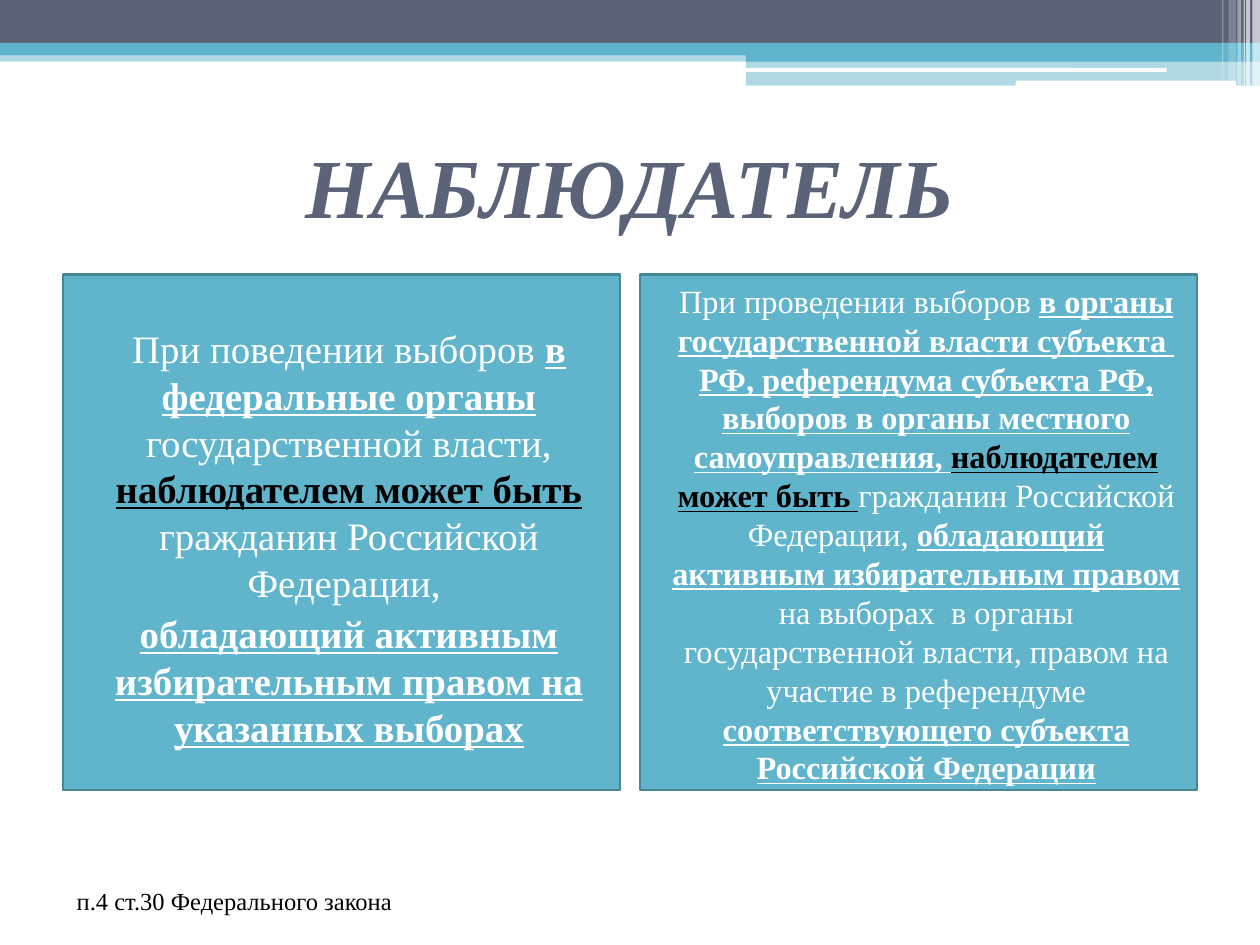
from lxml import etree
from pptx import Presentation
from pptx.dml.color import RGBColor
from pptx.enum import shapes, text
from pptx.oxml.ns import qn
from pptx.util import Inches, Pt

SLATE = RGBColor(0x5A, 0x63, 0x78)
TEAL = RGBColor(0x60, 0xB5, 0xCC)
TEAL_EDGE = RGBColor(0x47, 0x86, 0x97)
WHITE = RGBColor(0xFF, 0xFF, 0xFF)
BLACK = RGBColor(0, 0, 0)
FONT = "Times New Roman"
RECT = shapes.MSO_SHAPE.RECTANGLE
ROUND = shapes.MSO_SHAPE.ROUNDED_RECTANGLE

PLAIN = (WHITE, False)
STRONG = (WHITE, True)
KEY = (BLACK, True)


def add_block(slide, box, color, alpha=100, kind=RECT):
    sp = slide.shapes.add_shape(kind, *map(Inches, box))
    sp.shadow.inherit = False
    sp.fill.solid()
    sp.fill.fore_color.rgb = color
    sp.line.fill.background()
    if alpha < 100:
        clr = sp.fill._xPr.find(qn("a:solidFill"))[0]
        etree.SubElement(clr, qn("a:alpha")).set("val", str(alpha * 1000))
    return sp


def add_header(slide, left, top, width):
    right = left + width
    tab = left + 5.92
    bands = [
        (left, 0.4, width, 0.09, TEAL, 50),
        (left, 0, width, 0.34, SLATE, 100),
        (left, 0.34, width, 0.1, TEAL, 100),
        (tab, 0.39, right - tab, 0.1, TEAL, 100),
        (tab, 0.48, right - tab, 0.2, TEAL, 50),
    ]
    for x, y, w, h, color, alpha in bands:
        add_block(slide, (x, top + y, w, h), color, alpha)
    for x, y, w, h in [(5.91, 0.54, 3.35, 0.03), (8.06, 0.64, 1.75, 0.05)]:
        sp = add_block(slide, (left + x, top + y, w, h), WHITE, kind=ROUND)
        sp.adjustments[0] = 0.17
    stripes = [
        (0.06, 0.06, 0.68, 65),
        (0.11, 0.03, 0.68, 65),
        (0.13, 0.01, 0.68, 60),
        (0.18, 0.03, 0.68, 40),
        (0.25, 0.06, 0.64, 20),
        (0.3, 0.01, 0.64, 30),
    ]
    for offset, w, h, alpha in stripes:
        add_block(slide, (right - offset, top, w, h), WHITE, alpha)


def add_label(slide, box, words, size, color, heading=False):
    tf = slide.shapes.add_textbox(*map(Inches, box)).text_frame
    tf.word_wrap = True
    p = tf.paragraphs[0]
    p.text = words
    p.font.name = FONT
    p.font.size = Pt(size)
    p.font.color.rgb = color
    if heading:
        tf.vertical_anchor = text.MSO_ANCHOR.MIDDLE
        p.alignment = text.PP_ALIGN.CENTER
        p.font.bold = p.font.italic = True


def add_panel(slide, box, paragraphs, size, top_inset=0.05):
    sp = add_block(slide, box, TEAL)
    sp.line.color.rgb = TEAL_EDGE
    sp.line.width = Pt(1.5)
    tf = sp.text_frame
    tf.word_wrap = True
    tf.vertical_anchor = text.MSO_ANCHOR.TOP
    tf.margin_top = Inches(top_inset)
    for i, runs in enumerate(paragraphs):
        p = tf.add_paragraph() if i else tf.paragraphs[0]
        p.alignment = text.PP_ALIGN.CENTER
        p.space_before = Pt(3)
        p._p.get_or_add_pPr().set("marL", str(Inches(0.12)))
        p.font.name = FONT
        p.font.size = Pt(size)
        for words, (color, strong) in runs:
            r = p.add_run()
            r.text = words
            r.font.color.rgb = color
            r.font.bold = r.font.underline = strong


FEDERAL = [
    [
        ("При поведении выборов ", PLAIN),
        ("в", STRONG),
        (" ", PLAIN),
        ("федеральные органы ", STRONG),
        ("государственной власти, ", PLAIN),
        ("наблюдателем может быть ", KEY),
        ("гражданин Российской Федерации, ", PLAIN),
    ],
    [("обладающий активным избирательным правом на указанных выборах", STRONG)],
]
REGIONAL = [
    [
        ("При проведении выборов ", PLAIN),
        ("в органы государственной власти субъекта  РФ, референдума субъекта РФ, "
         "выборов в органы местного самоуправления, ", STRONG),
        ("наблюдателем может быть ", KEY),
        ("гражданин Российской Федерации, ", PLAIN),
        ("обладающий активным избирательным правом", STRONG),
        (" на выборах  в органы государственной власти, "
         "правом на участие в референдуме ", PLAIN),
        ("соответствующего субъекта Российской Федерации", STRONG),
    ],
]


def main():
    prs = Presentation()
    prs.slide_width, prs.slide_height = Inches(10), Inches(7.5)
    slide = prs.slides.add_slide(prs.slide_layouts[6])
    add_header(slide, 0, 0, 10)
    add_label(slide, (0.5, 0.84, 9, 1.26), "НАБЛЮДАТЕЛЬ", 48, SLATE, heading=True)
    add_panel(slide, (0.5, 2.18, 4.42, 4.09), FEDERAL, 22.2, top_inset=0.4)
    add_panel(slide, (5.08, 2.18, 4.42, 4.09), REGIONAL, 18.5)
    add_label(slide, (0.51, 6.98, 4.49, 0.34), "п.4 ст.30 Федерального закона", 14, BLACK)
    prs.save("out.pptx")


if __name__ == "__main__":
    main()
